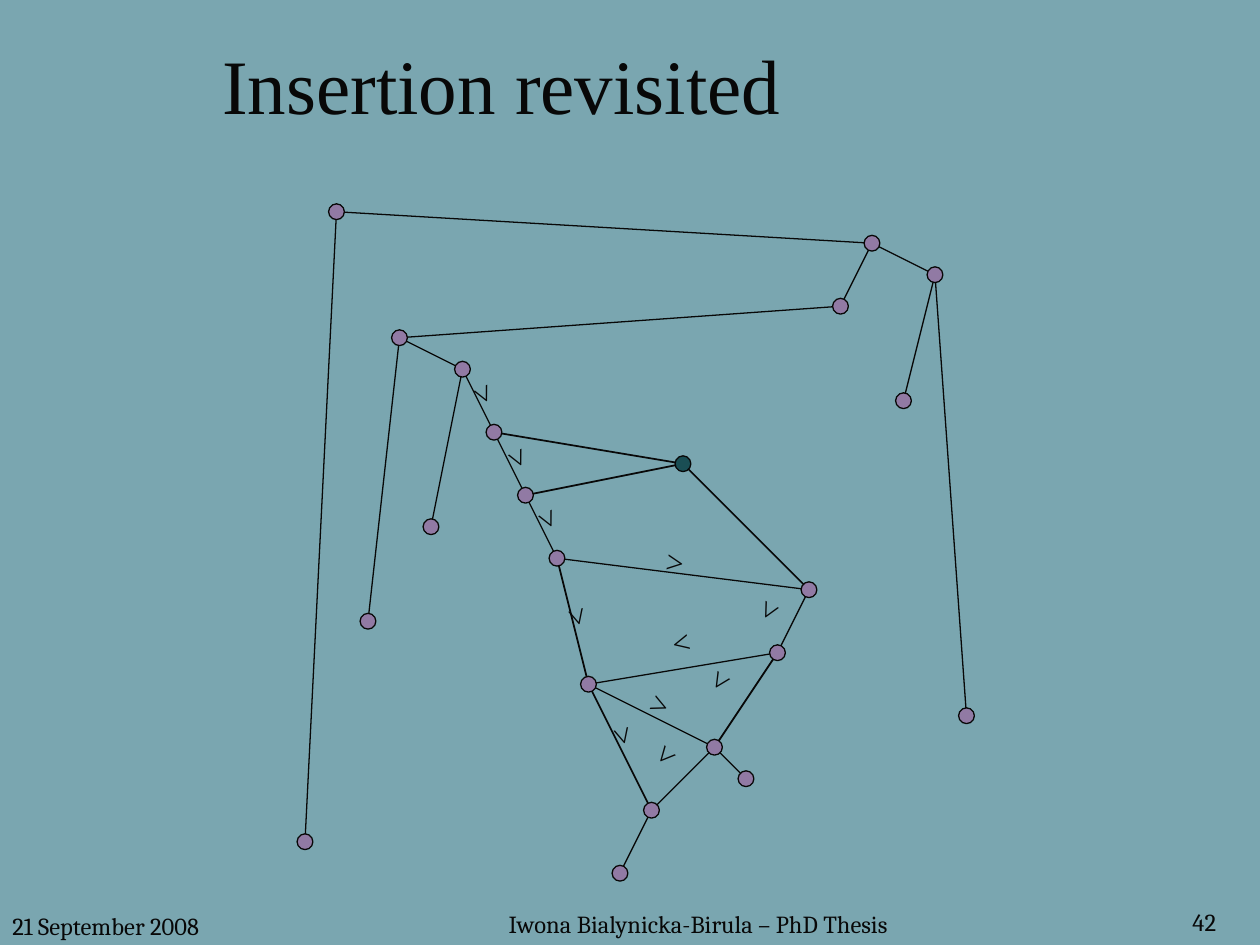
from pptx import Presentation
from pptx.dml.color import RGBColor
from pptx.enum.shapes import MSO_CONNECTOR, MSO_SHAPE
from pptx.enum.text import MSO_ANCHOR, MSO_AUTO_SIZE, PP_ALIGN
from pptx.oxml.ns import qn
from pptx.util import Pt

STRAIGHT = MSO_CONNECTOR.STRAIGHT
OVAL = MSO_SHAPE.OVAL
TOP, MIDDLE = MSO_ANCHOR.TOP, MSO_ANCHOR.MIDDLE
LEFT, CENTER, RIGHT = PP_ALIGN.LEFT, PP_ALIGN.CENTER, PP_ALIGN.RIGHT
FIT_SHAPE = MSO_AUTO_SIZE.SHAPE_TO_FIT_TEXT

TEAL = RGBColor(0x7A, 0xA6, 0xB0)
INK = RGBColor(0x08, 0x08, 0x08)
PURPLE = RGBColor(0x91, 0x7A, 0xA4)
DARK_TEAL = RGBColor(0x1A, 0x4E, 0x54)

SERIF, FOOTER_FONT = "Times New Roman", "Cambria"
GRID_LEFT, GRID_TOP, GRID_STEP = 174.3, 121, 18
NODE_SIZE = 9
SIGN_WIDTH, SIGN_HEIGHT = 28.1, 28.8
THIN, THICK = 0.75, 1

NODE_ROWS = [20, 0, 13, 4, 10, 5, 7, 9, 11, 15, 21,
             19, 8, 17, 18, 14, 12, 3, 1, 6, 2, 16]
INSERTED = 12
THICK_EDGES = [(12, 7), (12, 16), (12, 6), (8, 9), (9, 11), (15, 13)]
THIN_EDGES = [(8, 16), (16, 15), (15, 9), (9, 13), (13, 14), (13, 11), (11, 10),
              (7, 8), (6, 7), (5, 6), (5, 4), (3, 2), (3, 5), (3, 17),
              (21, 20), (20, 19), (0, 1), (18, 17), (18, 20), (18, 1)]
ORDER_SIGNS = [
    (317.5, 339.8, 75.4), (343.4, 408.2, 75.4), (397.4, 377.3, 122.9),
    (373.7, 306.7, 8.4), (301, 283.7, 64.3), (365.8, 419.8, 131.8),
    (283.7, 249.1, 64.3), (425.5, 337, 117.9), (373.7, 355, 166.9),
    (365, 388.8, 24.4), (264.2, 212.4, 64.3),
]


def node_center(column):
    return (GRID_LEFT + GRID_STEP * column,
            GRID_TOP + GRID_STEP * NODE_ROWS[column])


class TreeSlide:
    def __init__(self, deck):
        self.page = deck.slides.add_slide(deck.slide_layouts[6])
        fill = self.page.background.fill
        fill.solid()
        fill.fore_color.rgb = TEAL

    def text(self, words, left, top, width, height, size, font=SERIF,
             align=LEFT, anchor=TOP):
        box = self.page.shapes.add_textbox(Pt(left), Pt(top), Pt(width), Pt(height))
        frame = box.text_frame
        frame.word_wrap = True
        frame.vertical_anchor = anchor
        frame.text = words
        para = frame.paragraphs[0]
        para.alignment = align
        span = para.runs[0]
        span.font.name = font
        span.font.size = Pt(size)
        span.font.color.rgb = INK
        return box

    def sign(self, left, top, angle):
        box = self.text(">", left, top, SIGN_WIDTH, SIGN_HEIGHT, 18)
        box.text_frame.word_wrap = False
        box.text_frame.auto_size = FIT_SHAPE
        box.rotation = angle

    def edge(self, start, end, weight):
        points = [Pt(value) for value in node_center(start) + node_center(end)]
        line = self.page.shapes.add_connector(STRAIGHT, *points)
        line.line.color.rgb = INK
        line.line.width = Pt(weight)
        properties = line._element.spPr
        properties.append(properties.makeelement(qn("a:effectLst"), {}))

    def node(self, column, color):
        x, y = node_center(column)
        circle = self.page.shapes.add_shape(
            OVAL, Pt(x - NODE_SIZE / 2), Pt(y - NODE_SIZE / 2),
            Pt(NODE_SIZE), Pt(NODE_SIZE))
        circle.shadow.inherit = False
        circle.fill.solid()
        circle.fill.fore_color.rgb = color
        circle.line.color.rgb = INK
        circle.line.width = Pt(THIN)


def main():
    deck = Presentation()
    deck.slide_width, deck.slide_height = Pt(720), Pt(540)
    slide = TreeSlide(deck)

    slide.text("21 September 2008", 0, 517, 144, 23, 14, FOOTER_FONT)
    slide.text("Iwona Bialynicka-Birula – PhD Thesis", 162, 516, 474, 23, 14,
               FOOTER_FONT, CENTER)
    slide.text("42", 648, 515, 54, 25, 14, FOOTER_FONT, RIGHT)
    slide.text("Insertion revisited", 120, 6, 581, 84, 44, anchor=MIDDLE)

    for left, top, angle in ORDER_SIGNS:
        slide.sign(left, top, angle)
    for edges, weight in ((THICK_EDGES, THICK), (THIN_EDGES, THIN)):
        for start, end in edges:
            slide.edge(start, end, weight)
    for column in range(len(NODE_ROWS)):
        slide.node(column, DARK_TEAL if column == INSERTED else PURPLE)

    deck.save("out.pptx")


if __name__ == "__main__":
    main()
